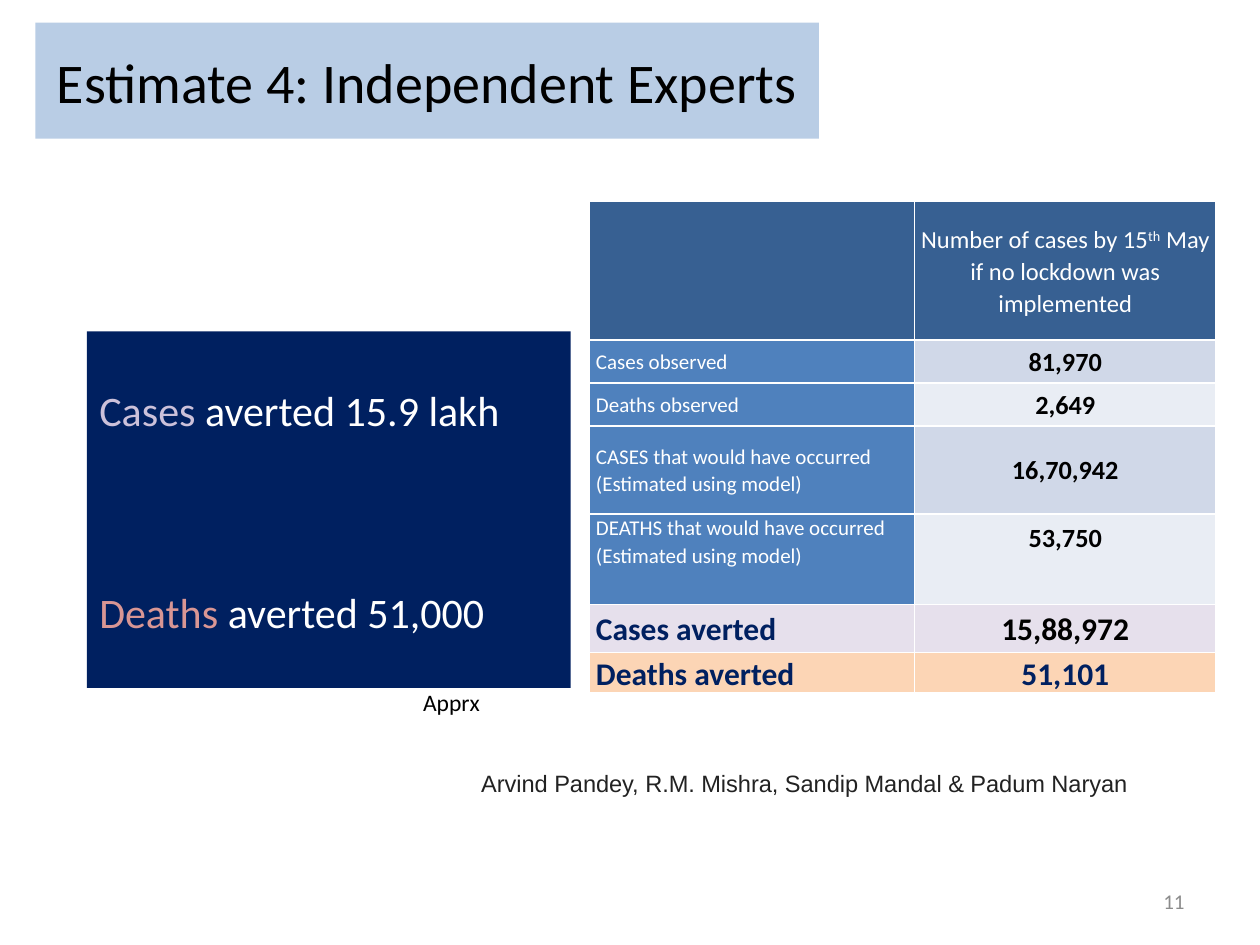
"""Builds the slide that compares lockdown estimates from independent experts."""
from dataclasses import dataclass

from lxml.etree import SubElement
from pptx import Presentation
from pptx.dml.color import RGBColor
from pptx.enum.shapes import MSO_SHAPE
from pptx.enum.text import MSO_ANCHOR, PP_ALIGN
from pptx.oxml.ns import qn
from pptx.util import Inches, Pt


@dataclass(frozen=True)
class Theme:
    font: str = "Calibri"
    credit_font: str = "Arial"
    black: str = "000000"
    white: str = "FFFFFF"
    ink: str = "222222"
    grey: str = "8C8C8C"
    navy: str = "002060"
    title_blue: str = "B9CDE5"
    header_blue: str = "376092"
    label_blue: str = "4F81BD"
    band_dark: str = "D0D8E8"
    band_light: str = "E9EDF4"
    lilac: str = "E6E0EC"
    peach: str = "FCD5B5"
    cases: str = "CCC1DA"
    deaths: str = "D99694"
    title_size: float = 32
    finding_size: float = 24
    total_size: float = 18
    value_size: float = 15
    header_size: float = 14
    note_size: float = 13.5
    label_size: float = 12


class SlideBuilder:
    def __init__(self, slide, theme, unit):
        self.slide, self.theme, self.unit = slide, theme, unit

    def place(self, box):
        return [Inches(length * self.unit) for length in box]

    def style(self, paragraph, size, color=None, bold=False, align=PP_ALIGN.LEFT, font=None):
        paragraph.alignment = align
        paragraph.font.name = font or self.theme.font
        paragraph.font.size = Pt(size)
        paragraph.font.bold = bold
        if color:
            paragraph.font.color.rgb = RGBColor.from_string(color)

    def text(self, box, words, size, color, anchor=MSO_ANCHOR.TOP, **style):
        frame = self.slide.shapes.add_textbox(*self.place(box)).text_frame
        frame.word_wrap = True
        frame.vertical_anchor = anchor
        frame.text = words
        self.style(frame.paragraphs[0], size, color, **style)

    def panel(self, box, fill):
        panel = self.slide.shapes.add_shape(MSO_SHAPE.RECTANGLE, *self.place(box))
        panel.shadow.inherit = False
        panel.fill.solid()
        panel.fill.fore_color.rgb = RGBColor.from_string(fill)
        panel.line.fill.background()
        panel.text_frame.word_wrap = True
        return panel.text_frame

    def title(self, box, words):
        frame = self.panel(box, self.theme.title_blue)
        frame.text = words
        self.style(frame.paragraphs[0], self.theme.title_size, self.theme.black,
                   align=PP_ALIGN.CENTER)

    def findings(self, box, findings, top, gap):
        frame = self.panel(box, self.theme.navy)
        frame.vertical_anchor = MSO_ANCHOR.TOP
        frame.margin_top = Inches(top * self.unit)
        for index, (subject, result, color) in enumerate(findings):
            paragraph = frame.add_paragraph() if index else frame.paragraphs[0]
            self.style(paragraph, self.theme.finding_size)
            if index:
                paragraph.space_before = Pt(gap)
            for words, run_color in ((subject, color), (result, self.theme.white)):
                run = paragraph.add_run()
                run.text = words
                run.font.color.rgb = RGBColor.from_string(run_color)

    def border(self, cell):
        properties = cell._tc.get_or_add_tcPr()
        for position, side in enumerate(("a:lnL", "a:lnR", "a:lnT", "a:lnB")):
            line = properties.makeelement(qn(side), {"w": str(Pt(1))})
            fill = SubElement(line, qn("a:solidFill"))
            SubElement(fill, qn("a:srgbClr"), val=self.theme.white)
            properties.insert(position, line)

    def cell(self, cell, parts, fill, size, color, anchor=MSO_ANCHOR.MIDDLE, top=0, **style):
        cell.fill.solid()
        cell.fill.fore_color.rgb = RGBColor.from_string(fill)
        self.border(cell)
        cell.vertical_anchor = anchor
        cell.margin_left = cell.margin_right = Inches(0.05)
        cell.margin_top, cell.margin_bottom = Inches(top), 0
        paragraph = cell.text_frame.paragraphs[0]
        paragraph.line_spacing = 1.07
        self.style(paragraph, size, color, **style)
        for index, words in enumerate(parts):
            run = paragraph.add_run()
            run.text = words
            if index % 2:
                run._r.get_or_add_rPr().set("baseline", "30000")

    def table(self, corner, widths, heights):
        box = (*corner, sum(widths), sum(heights))
        table = self.slide.shapes.add_table(
            len(heights), len(widths), *self.place(box)).table
        table.first_row = table.horz_banding = False
        for column, width in zip(table.columns, widths):
            column.width = Inches(width * self.unit)
        for row, height in zip(table.rows, heights):
            row.height = Inches(height * self.unit)
        return table


def estimate_table(builder):
    theme = builder.theme
    table = builder.table((46.8, 16), (25.8, 23.9), (11, 3.4, 3.4, 7, 7.2, 3.8, 3.2))
    header = ([], ["Number of cases by 15", "th", " May if no lockdown was implemented"])
    for column, parts in enumerate(header):
        builder.cell(table.cell(0, column), parts, theme.header_blue,
                     theme.header_size, theme.white, align=PP_ALIGN.CENTER)

    estimates = (
        ("Cases observed", "81,970", MSO_ANCHOR.MIDDLE, 0),
        ("Deaths observed", "2,649", MSO_ANCHOR.MIDDLE, 0),
        ("CASES that would have occurred (Estimated using model)", "16,70,942",
         MSO_ANCHOR.MIDDLE, 0),
        ("DEATHS that would have occurred (Estimated using model)", "53,750",
         MSO_ANCHOR.TOP, 0.05),
    )
    bands = (theme.band_dark, theme.band_light)
    for row, (label, value, anchor, top) in enumerate(estimates, start=1):
        builder.cell(table.cell(row, 0), [label], theme.label_blue,
                     theme.label_size, theme.white, anchor)
        builder.cell(table.cell(row, 1), [value], bands[(row - 1) % 2], theme.value_size,
                     theme.black, anchor, top, bold=True, align=PP_ALIGN.CENTER)

    totals = (
        ("Cases averted", "15,88,972", theme.lilac, theme.black),
        ("Deaths averted", "51,101", theme.peach, theme.navy),
    )
    for row, (label, value, fill, color) in enumerate(totals, start=len(estimates) + 1):
        builder.cell(table.cell(row, 0), [label], fill, theme.total_size,
                     theme.navy, bold=True)
        builder.cell(table.cell(row, 1), [value], fill, theme.total_size, color,
                     bold=True, align=PP_ALIGN.CENTER)


def main():
    deck = Presentation()
    deck.slide_width, deck.slide_height = Inches(10), Inches(7.5)
    theme = Theme()
    slide = deck.slides.add_slide(deck.slide_layouts[6])
    builder = SlideBuilder(slide, theme, unit=0.1)

    builder.title((2.8, 1.8, 62.2, 9.2), "Estimate 4: Independent Experts")
    builder.text((37.2, 60.5, 55.9, 3.3),
                 "Arvind Pandey, R.M. Mishra, Sandip Mandal & Padum Naryan",
                 theme.note_size, theme.ink, font=theme.credit_font)
    estimate_table(builder)
    builder.findings((6.9, 26.3, 38.4, 28.3), (
        ("Cases", " averted 15.9 lakh", theme.cases),
        ("Deaths", " averted 51,000", theme.deaths),
    ), top=4.2, gap=87)
    builder.text((32.6, 54.1, 9.9, 3.3), "Apprx", theme.note_size, theme.black)
    builder.text((71.7, 69.5, 23.3, 4), "11", theme.label_size, theme.grey,
                 MSO_ANCHOR.MIDDLE, align=PP_ALIGN.RIGHT)
    deck.save("out.pptx")


if __name__ == "__main__":
    main()
